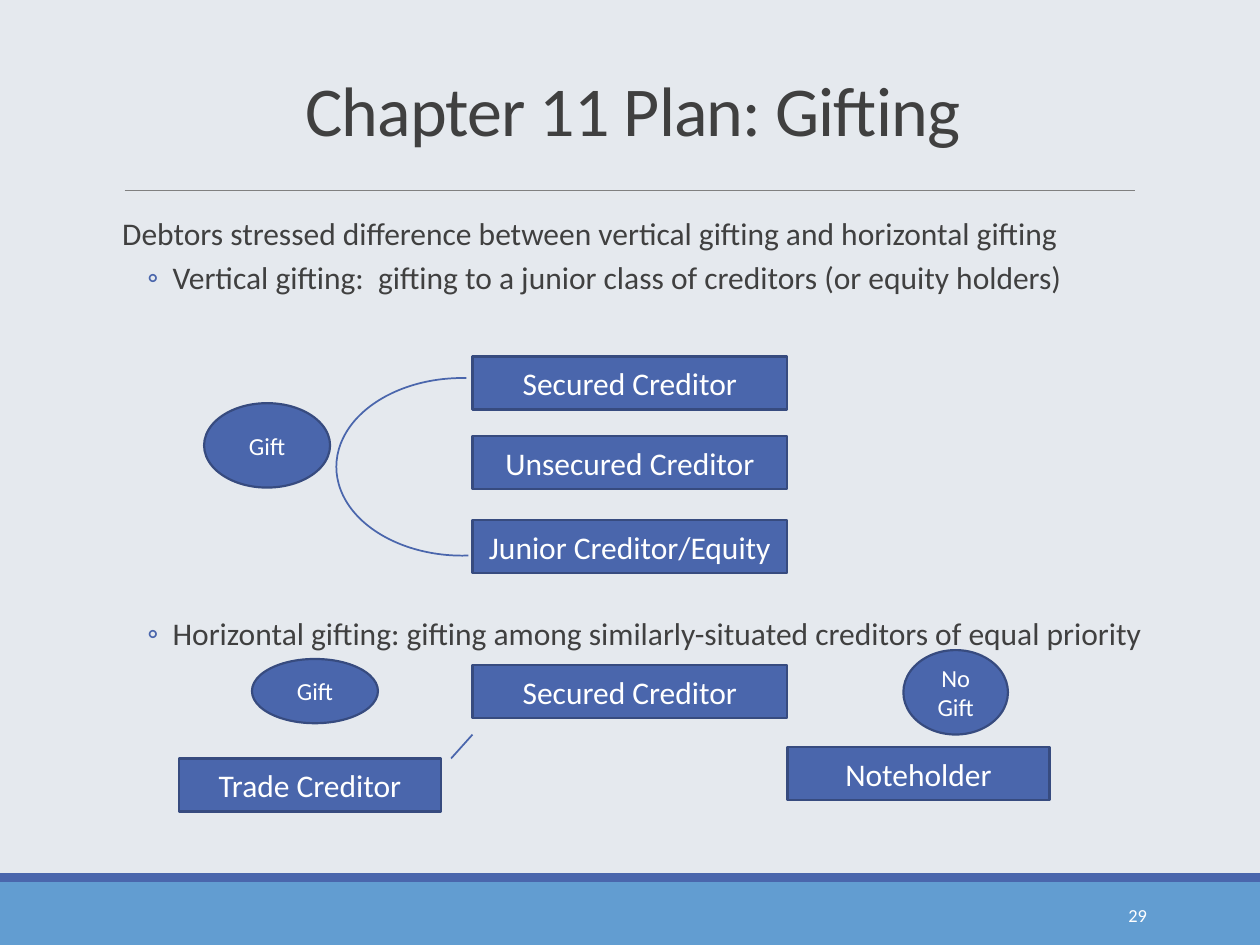
from dataclasses import dataclass

import pptx
import pptx.dml.color
import pptx.enum.shapes
import pptx.enum.text
import pptx.oxml
import pptx.oxml.ns
import pptx.util

Inches = pptx.util.Inches
Pt = pptx.util.Pt
Shape = pptx.enum.shapes.MSO_SHAPE
Align = pptx.enum.text.PP_ALIGN
Anchor = pptx.enum.text.MSO_ANCHOR


@dataclass(frozen=True)
class Theme:
    font: str = "Calibri"
    background: str = "E5E9EE"
    accent: str = "4A66AC"
    outline: str = "374B7F"
    footer: str = "629DD1"
    rule: str = "808080"
    ink: str = "404040"
    light: str = "FFFFFF"
    title_size: float = 40
    body_size: float = 18
    oval_size: float = 14
    number_size: float = 10.5


THEME = Theme()
LABEL_HEIGHT = 0.42
CREDITOR_LEFT, CREDITOR_WIDTH = 3.75, 2.5
CLASS_WIDTH = 2.08


def rgb(value):
    return pptx.dml.color.RGBColor.from_string(value)


def inches(box):
    return [Inches(length) for length in box]


def format_text(frame, size, color, align):
    for para in frame.paragraphs:
        para.alignment = align
        for span in para.runs:
            span.font.name = THEME.font
            span.font.size = Pt(size)
            span.font.color.rgb = rgb(color)


def add_block(page, box, kind, fill, line=None):
    shape = page.shapes.add_shape(kind, *inches(box))
    shape.shadow.inherit = False
    shape.fill.solid()
    shape.fill.fore_color.rgb = rgb(fill)
    if line:
        shape.line.color.rgb = rgb(line)
        shape.line.width = Pt(1.25)
    else:
        shape.line.fill.background()
    return shape


def add_label(page, box, text, kind=Shape.RECTANGLE, size=THEME.body_size):
    frame = add_block(page, box, kind, THEME.accent, THEME.outline).text_frame
    frame.text = text
    frame.word_wrap = True
    frame.vertical_anchor = Anchor.MIDDLE
    format_text(frame, size, THEME.light, Align.CENTER)


def add_oval(page, box, text):
    add_label(page, box, text, Shape.OVAL, THEME.oval_size)


def add_line(page, start, end, color, width):
    line = page.shapes.add_connector(
        pptx.enum.shapes.MSO_CONNECTOR.STRAIGHT, *inches(start + end))
    line.line.color.rgb = rgb(color)
    line.line.width = Pt(width)
    line._element.spPr.append(pptx.oxml.parse_xml(
        f'<a:effectLst {pptx.oxml.ns.nsdecls("a")}/>'))


def add_title(page, box, text):
    title = page.shapes.title
    title.left, title.top, title.width, title.height = inches(box)
    frame = title.text_frame
    frame.text = text
    frame.auto_size = pptx.enum.text.MSO_AUTO_SIZE.NONE
    frame.vertical_anchor = Anchor.BOTTOM
    frame.paragraphs[0].line_spacing = 0.85
    format_text(frame, THEME.title_size, THEME.ink, Align.CENTER)
    frame.paragraphs[0].runs[0].font._element.set("spc", "-50")


def add_bullet(para):
    """Give the paragraph a hanging ring bullet in the accent colour."""
    properties = para._p.get_or_add_pPr()
    properties.set("marL", str(Inches(0.62)))
    properties.set("indent", str(-Inches(0.2)))
    namespace = pptx.oxml.ns.nsdecls("a")
    for xml in (
        f'<a:buClr {namespace}><a:srgbClr val="{THEME.accent}"/></a:buClr>',
        f'<a:buFont {namespace} typeface="{THEME.font}"/>',
        f'<a:buChar {namespace} char="◦"/>',
    ):
        properties.append(pptx.oxml.parse_xml(xml))


def add_body(page, box, lead, bullets, diagram_gap):
    """Write the lead and its bullets, leaving diagram_gap above the last one."""
    frame = page.shapes.add_textbox(*inches(box)).text_frame
    frame.word_wrap = True
    frame.margin_left = frame.margin_right = 0
    frame.text = "\n".join([lead, *bullets])
    format_text(frame, THEME.body_size, THEME.ink, Align.LEFT)
    for para in frame.paragraphs:
        para.line_spacing = 0.9
        para.space_before, para.space_after = Pt(2), Pt(4)
    first, *rest = frame.paragraphs
    first._p.get_or_add_pPr().set("marL", str(Inches(0.22)))
    rest[-1].space_before = Pt(diagram_gap)
    for para in rest:
        add_bullet(para)


def add_vertical_gifting(page, left, top):
    creditors = {"Secured Creditor": 0, "Unsecured Creditor": 0.63,
                 "Junior Creditor/Equity": 1.3}
    for name, offset in creditors.items():
        add_label(page, (CREDITOR_LEFT, top + offset, CREDITOR_WIDTH, LABEL_HEIGHT), name)
    arc = page.shapes.add_shape(
        Shape.ARC, *inches((left + 1.05, top + 0.17, 2, 1.41)))
    arc.shadow.inherit = False
    arc.adjustments[0], arc.adjustments[1] = 51.7, 163.59
    arc.fill.background()
    arc.line.color.rgb = rgb(THEME.accent)
    arc.line.width = Pt(1)
    add_oval(page, (left, top + 0.37, 1, 0.67), "Gift")


def add_horizontal_gifting(page, left, top):
    add_label(page, (CREDITOR_LEFT, top + 0.12, CREDITOR_WIDTH, LABEL_HEIGHT),
              "Secured Creditor")
    add_label(page, (left, top + 0.86, CLASS_WIDTH, LABEL_HEIGHT), "Trade Creditor")
    add_label(page, (left + 4.83, top + 0.77, CLASS_WIDTH, LABEL_HEIGHT), "Noteholder")
    add_line(page, (left + 2.16, top + 0.86), (CREDITOR_LEFT, top + 0.67),
             THEME.accent, 1)
    add_oval(page, (left + 0.58, top + 0.07, 1, 0.51), "Gift")
    add_oval(page, (left + 5.75, top, 0.83, 0.67), "No Gift")


def add_footer(page, box, number):
    left, top, width, height = box
    stripe = 0.07
    add_block(page, (left, top + stripe, width, height - stripe),
              Shape.RECTANGLE, THEME.footer)
    add_block(page, (left, top, width, stripe), Shape.RECTANGLE, THEME.accent)
    frame = page.shapes.add_textbox(
        *inches((left + 8.12, top + 0.13, 1.08, 0.4))).text_frame
    frame.text = number
    frame.word_wrap = True
    frame.vertical_anchor = Anchor.MIDDLE
    format_text(frame, THEME.number_size, THEME.light, Align.RIGHT)


def main():
    deck = pptx.Presentation()
    deck.slide_width, deck.slide_height = Inches(10), Inches(7.5)
    page = deck.slides.add_slide(deck.slide_layouts.get_by_name("Title Only"))
    page.background.fill.solid()
    page.background.fill.fore_color.rgb = rgb(THEME.background)

    add_footer(page, (0, 6.93, 10, 0.57), "29")
    add_line(page, (0.99, 1.51), (9.01, 1.51), THEME.rule, 0.5)
    add_title(page, (0.9, 0.31, 8.25, 0.94), "Chapter 11 Plan: Gifting")
    add_body(
        page, (0.75, 1.68, 8.5, 5.16),
        "Debtors stressed difference between vertical gifting and horizontal gifting",
        ["Vertical gifting:  gifting to a junior class of creditors (or equity holders)",
         "Horizontal gifting: gifting among similarly-situated creditors of equal priority"],
        diagram_gap=180)
    add_vertical_gifting(page, 1.62, 2.83)
    add_horizontal_gifting(page, 1.42, 5.16)
    deck.save("out.pptx")


if __name__ == "__main__":
    main()
